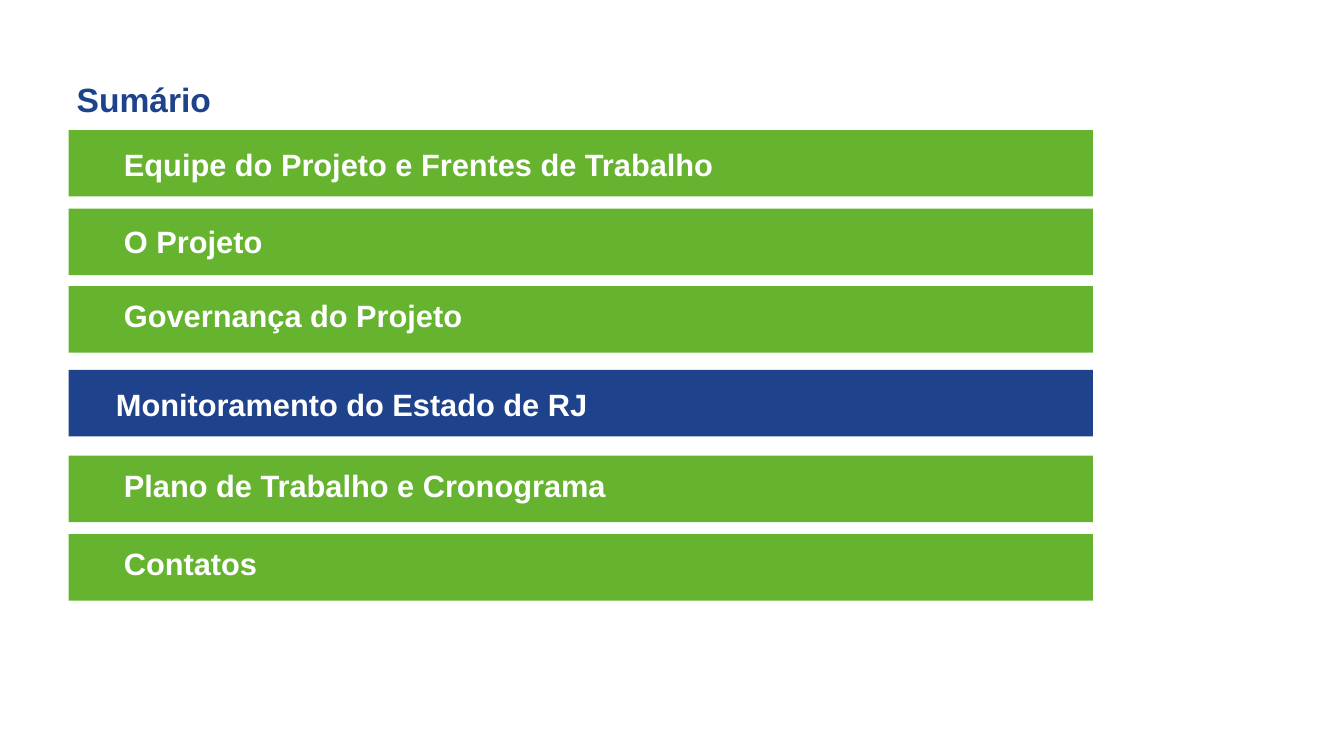
from pptx import Presentation
from pptx.dml.color import RGBColor
from pptx.enum.shapes import MSO_SHAPE as Shape
from pptx.enum.text import MSO_ANCHOR as Anchor, PP_ALIGN as Align
from pptx.util import Inches, Pt

# Content
GREEN, BLUE, WHITE = "65B32E", "1E428B", "FFFFFF"
TITLE = "Sumário"
# text, bar top, label left, label top, bar colour
ITEMS = [
    ("Equipe do Projeto e Frentes de Trabalho", 1.29, 0.68, 1.39, GREEN),
    ("O Projeto", 2.07, 0.68, 2.16, GREEN),
    ("Governança do Projeto", 2.84, 0.68, 2.89, GREEN),
    ("Monitoramento do Estado de RJ", 3.67, 0.6, 3.77, BLUE),
    ("Plano de Trabalho e Cronograma", 4.52, 0.68, 4.58, GREEN),
    ("Contatos", 5.3, 0.68, 5.35, GREEN),
]
LEFT, WIDTH, BAR_H, LABEL_H, TITLE_H = 0.68, 10.16, 0.66, 0.47, 0.5


def color(code):
    return RGBColor.from_string(code)


def write(box, text, size, code, margin, indent):
    frame = box.text_frame
    frame.word_wrap = True
    frame.vertical_anchor = Anchor.MIDDLE
    frame.margin_left = frame.margin_right = Inches(0.05)
    frame.margin_top = frame.margin_bottom = Inches(0.05)
    para = frame.paragraphs[0]
    para.alignment = Align.LEFT
    props = para._p.get_or_add_pPr()
    props.set("marL", str(Inches(margin)))
    props.set("indent", str(Inches(indent)))
    run = para.add_run()
    run.text = text
    font = run.font
    font.name, font.size, font.bold = "Arial", Pt(size), True
    font.color.rgb = color(code)


def add_bar(slide, top, code):
    bar = slide.shapes.add_shape(
        Shape.RECTANGLE, Inches(LEFT), Inches(top), Inches(WIDTH), Inches(BAR_H))
    bar.shadow.inherit = False
    bar.fill.solid()
    bar.fill.fore_color.rgb = color(code)
    bar.line.fill.background()


def main():
    deck = Presentation()
    deck.slide_width, deck.slide_height = Inches(13.33), Inches(7.5)
    slide = deck.slides.add_slide(deck.slide_layouts[5])

    # Title
    title = slide.shapes.title
    title.left, title.top = Inches(0.21), Inches(0.73)
    title.width, title.height = Inches(WIDTH), Inches(TITLE_H)
    write(title, TITLE, 24, BLUE, 0, 0.5)

    # Agenda bars with their labels
    for text, top, left, label_top, code in ITEMS:
        add_bar(slide, top, code)
        label = slide.shapes.add_textbox(
            Inches(left), Inches(label_top), Inches(WIDTH), Inches(LABEL_H))
        write(label, text, 22, WHITE, 0.29, 0.21)

    deck.save("out.pptx")


if __name__ == "__main__":
    main()
